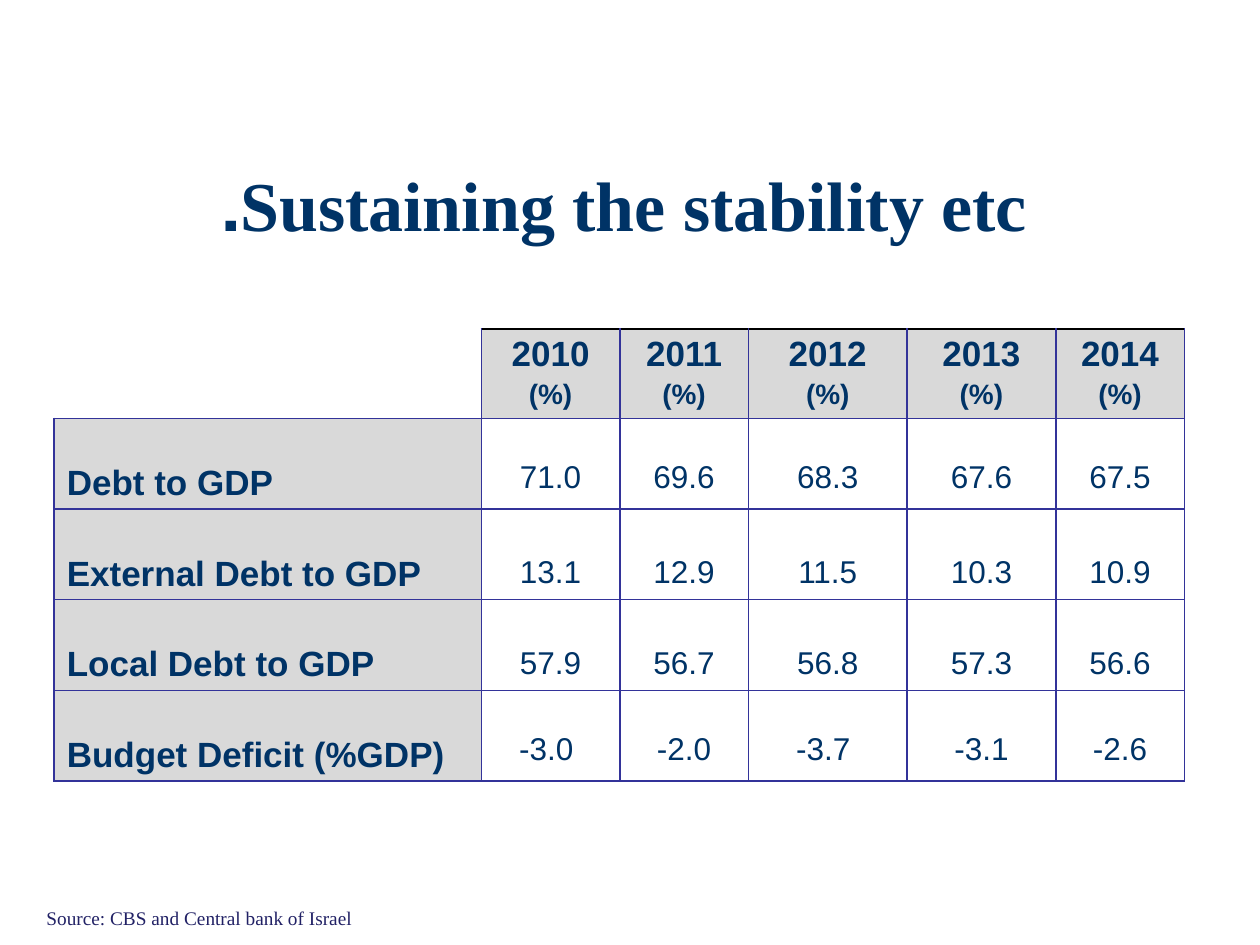
from dataclasses import dataclass

from lxml import etree
from pptx import Presentation
from pptx.dml.color import RGBColor
from pptx.enum.text import MSO_ANCHOR, PP_ALIGN
from pptx.oxml.ns import qn
from pptx.util import Inches, Pt

LEFT, CENTER = PP_ALIGN.LEFT, PP_ALIGN.CENTER
TOP, MIDDLE = MSO_ANCHOR.TOP, MSO_ANCHOR.MIDDLE
TITLE_ONLY = 5


@dataclass(frozen=True)
class Theme:
    navy: str = "003366"
    source: str = "212165"
    label_fill: str = "D9D9D9"
    value_fill: str = "FFFFFF"
    grid: str = "333399"
    header_top: str = "000000"
    serif: str = "Times New Roman"
    sans: str = "Arial"
    title_size: int = 40
    label_size: int = 20
    value_size: int = 18
    unit_size: int = 16
    source_size: int = 11


THEME = Theme()
YEARS = ["2010", "2011", "2012", "2013", "2014"]
INDICATORS = [
    ("Debt to GDP", ["71.0", "69.6", "68.3", "67.6", "67.5"]),
    ("External Debt to GDP", ["13.1", "12.9", "11.5", "10.3", "10.9"]),
    ("Local Debt to GDP", ["57.9", "56.7", "56.8", "57.3", "56.6"]),
    ("Budget Deficit (%GDP)", ["-3.0 ", "-2.0", "-3.7 ", "-3.1", "-2.6"]),
]
CENTERED_ROWS = (2, 3)
COLUMN_WIDTHS = [3.39, 1.1, 1.02, 1.26, 1.18, 1.02]
HEADER_HEIGHT, ROW_HEIGHT = 0.71, 0.72


def format_runs(para, font_name, size, color, bold=False):
    for span in para.runs:
        span.font.name = font_name
        span.font.size = Pt(size)
        span.font.bold = bold
        span.font.color.rgb = RGBColor.from_string(color)


def set_borders(cell, **colors):
    """Draw 1 pt cell borders; the keys are the sides L, R, T and B."""
    properties = cell._tc.get_or_add_tcPr()
    sides = [side for side in "LRTB" if side in colors]
    for index, side in enumerate(sides):
        line = etree.Element(qn(f"a:ln{side}"), w=str(Pt(1)))
        fill = etree.SubElement(line, qn("a:solidFill"))
        etree.SubElement(fill, qn("a:srgbClr"), val=colors[side])
        properties.insert(index, line)


def fill_cell(cell, color, top=THEME.grid):
    cell.fill.solid()
    cell.fill.fore_color.rgb = RGBColor.from_string(color)
    set_borders(cell, L=THEME.grid, R=THEME.grid, T=top, B=THEME.grid)


def write_header(cell, year):
    fill_cell(cell, THEME.label_fill, top=THEME.header_top)
    cell.text_frame.text = f"{year}\n(%)"
    year_para, unit_para = cell.text_frame.paragraphs
    unit_para.space_before = Pt(0.2 * THEME.unit_size)
    for para, size in ((year_para, THEME.label_size), (unit_para, THEME.unit_size)):
        para.alignment = CENTER
        format_runs(para, THEME.sans, size, THEME.navy, bold=True)


def write_body(cell, text, color, size, align, bold=False):
    fill_cell(cell, color)
    cell.text_frame.text = text
    para = cell.text_frame.paragraphs[0]
    para.alignment = align
    para.line_spacing = 2.0
    para.space_after = Pt(6)
    format_runs(para, THEME.sans, size, THEME.navy, bold)


def center_vertically(cell):
    cell.vertical_anchor = MIDDLE
    cell.margin_left = cell.margin_right = cell.margin_top = Inches(0.01)
    cell.margin_bottom = 0


def add_title(page, text):
    title = page.shapes.title
    title.left, title.top = Inches(0), Inches(0.99)
    title.width, title.height = Inches(9.92), Inches(1.25)
    frame = title.text_frame
    frame.text = text
    frame.vertical_anchor = MIDDLE
    para = frame.paragraphs[0]
    para.alignment = CENTER
    para._p.get_or_add_pPr().set("rtl", "1")
    format_runs(para, THEME.serif, THEME.title_size, THEME.navy, bold=True)


def add_indicator_table(page):
    height = HEADER_HEIGHT + ROW_HEIGHT * len(INDICATORS)
    table = page.shapes.add_table(
        len(INDICATORS) + 1, len(YEARS) + 1,
        Inches(0.43), Inches(2.61), Inches(sum(COLUMN_WIDTHS)), Inches(height),
    ).table
    table.first_row = table.horz_banding = False
    for column, width in zip(table.columns, COLUMN_WIDTHS):
        column.width = Inches(width)
    for index, row in enumerate(table.rows):
        row.height = Inches(ROW_HEIGHT if index else HEADER_HEIGHT)

    corner = table.cell(0, 0)
    corner.fill.background()
    set_borders(corner, R=THEME.grid, B=THEME.grid)
    for column, year in enumerate(YEARS, start=1):
        write_header(table.cell(0, column), year)

    for row, (label, values) in enumerate(INDICATORS, start=1):
        write_body(table.cell(row, 0), label, THEME.label_fill,
                   THEME.label_size, LEFT, bold=True)
        for column, value in enumerate(values, start=1):
            cell = table.cell(row, column)
            write_body(cell, value, THEME.value_fill, THEME.value_size, CENTER)
            if row in CENTERED_ROWS:
                center_vertically(cell)


def add_source(page, text):
    box = page.shapes.add_textbox(Inches(0.27), Inches(7.14), Inches(7.25), Inches(0.29))
    frame = box.text_frame
    frame.word_wrap = True
    frame.vertical_anchor = TOP
    frame.text = text
    format_runs(frame.paragraphs[0], THEME.serif, THEME.source_size, THEME.source)


def main():
    deck = Presentation()
    deck.slide_width, deck.slide_height = Inches(10), Inches(7.5)
    page = deck.slides.add_slide(deck.slide_layouts[TITLE_ONLY])
    add_title(page, "Sustaining the stability etc.")
    add_indicator_table(page)
    add_source(page, "Source: CBS and Central bank of Israel")
    deck.save("out.pptx")


if __name__ == "__main__":
    main()
